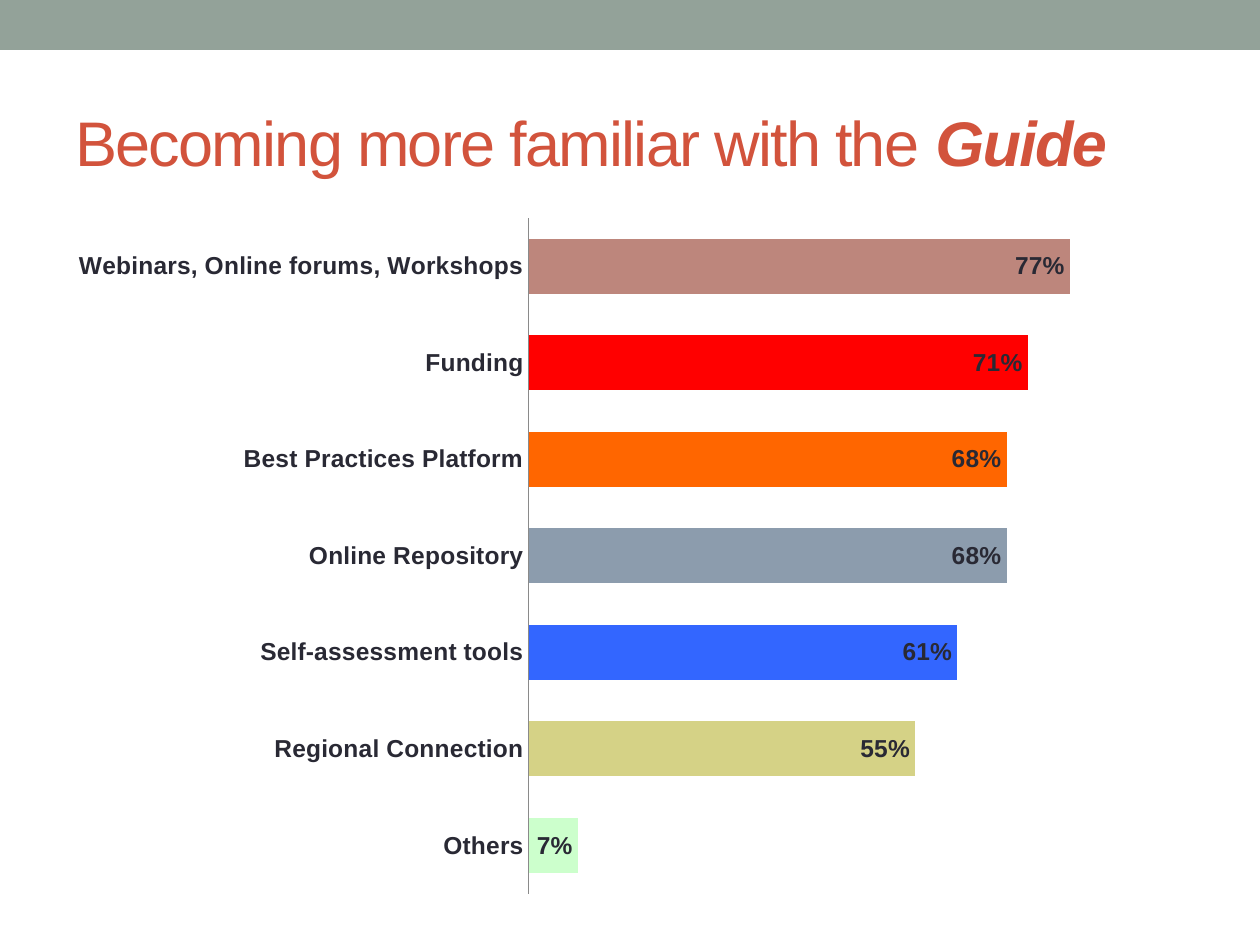
from lxml import etree
from pptx import Presentation, util as u
from pptx.chart.data import CategoryChartData
from pptx.dml.color import RGBColor
from pptx.enum import chart as ch, shapes, text
from pptx.oxml import parse_xml
from pptx.oxml.ns import nsdecls

SAGE = RGBColor(0x93, 0xA2, 0x99)
RUST = RGBColor(0xD2, 0x53, 0x3C)
INK = RGBColor(0x29, 0x29, 0x34)
GREY = RGBColor(0x8A, 0x8A, 0x8A)
FONT = "Arial"

# Answer, share, bar colour
ROWS = [
    ("Webinars, Online forums, Workshops", 0.77, RGBColor(0xBD, 0x86, 0x7C)),
    ("Funding", 0.71, RGBColor(0xFF, 0x00, 0x00)),
    ("Best Practices Platform", 0.68, RGBColor(0xFF, 0x66, 0x00)),
    ("Online Repository", 0.68, RGBColor(0x8C, 0x9C, 0xAD)),
    ("Self-assessment tools", 0.61, RGBColor(0x33, 0x66, 0xFF)),
    ("Regional Connection", 0.55, RGBColor(0xD5, 0xD2, 0x86)),
    ("Others", 0.07, RGBColor(0xCC, 0xFF, 0xCC)),
]


def px(*nums):
    return [u.Emu(round(n * 914400 / 126)) for n in nums]


def add_run(para, words, size=36, color=RUST, bold=False, italic=False, space=-1):
    run = para.add_run()
    run.text = words
    font = run.font
    font.name, font.size, font.color.rgb = FONT, u.Pt(size), color
    font.bold, font.italic = bold, italic
    run._r.get_or_add_rPr().set("spc", str(space * 100))


prs = Presentation()
prs.slide_width, prs.slide_height = px(1260, 945)
slide = prs.slides.add_slide(prs.slide_layouts[6])

# Top band
band = slide.shapes.add_shape(shapes.MSO_SHAPE.RECTANGLE, *px(0, 0, 1260, 50))
band.shadow.inherit = False
band.fill.solid()
band.fill.fore_color.rgb = SAGE
band.line.fill.background()

# Title
frame = slide.shapes.add_textbox(*px(63, 73, 1134, 136)).text_frame
frame.word_wrap = True
frame.vertical_anchor = text.MSO_ANCHOR.MIDDLE
head = frame.paragraphs[0]
add_run(head, "Becoming more familiar with the ")
add_run(head, "Guide", bold=True, italic=True)

# Bar chart
data = CategoryChartData(number_format="0%")
data.categories = [row[0] for row in ROWS]
data.add_series("Series 1", [row[1] for row in ROWS])
chart = slide.shapes.add_chart(
    ch.XL_CHART_TYPE.BAR_CLUSTERED, *px(54, 204, 1130, 704), data).chart
chart.has_legend = False
chart.has_title = False
chart.font.name, chart.font.size = FONT, u.Pt(10)
chart.font.color.rgb = INK

# Axes
cat = chart.category_axis
cat.reverse_order = True
cat.major_tick_mark = ch.XL_TICK_MARK.NONE
cat.format.line.color.rgb = GREY
val = chart.value_axis
val.visible = False
val.has_major_gridlines = False
val.minimum_scale, val.maximum_scale = 0, 0.9

# Bars and their labels
plot = chart.plots[0]
plot.gap_width, plot.overlap = 75, 40
plot.vary_by_categories = False
bars = plot.series[0]
bars.format.fill.solid()
bars.format.fill.fore_color.rgb = SAGE
for i, (_, _, color) in enumerate(ROWS):
    fill = bars.points[i].format.fill
    fill.solid()
    fill.fore_color.rgb = color
tags = bars.data_labels
tags.show_value = True
tags.position = ch.XL_LABEL_POSITION.INSIDE_END
tags.number_format, tags.number_format_is_linked = "0%", False
for font in (cat.tick_labels.font, tags.font):
    font.name, font.size, font.bold = FONT, u.Pt(14), True
    font.color.rgb = INK

# Plot area inside the chart frame
area = chart._chartSpace.chart.plotArea
for old in area.findall("{*}layout"):
    area.remove(old)
layout = parse_xml(f"<c:layout {nsdecls('c')}><c:manualLayout/></c:layout>")
for tag, value in [("layoutTarget", "inner"), ("xMode", "edge"), ("yMode", "edge"),
                   ("x", 0.42), ("y", 0.02), ("w", 0.56), ("h", 0.96)]:
    part = etree.SubElement(layout[0], layout.tag.replace("layout", tag))
    part.set("val", str(value))
area.insert(0, layout)

prs.save("out.pptx")
